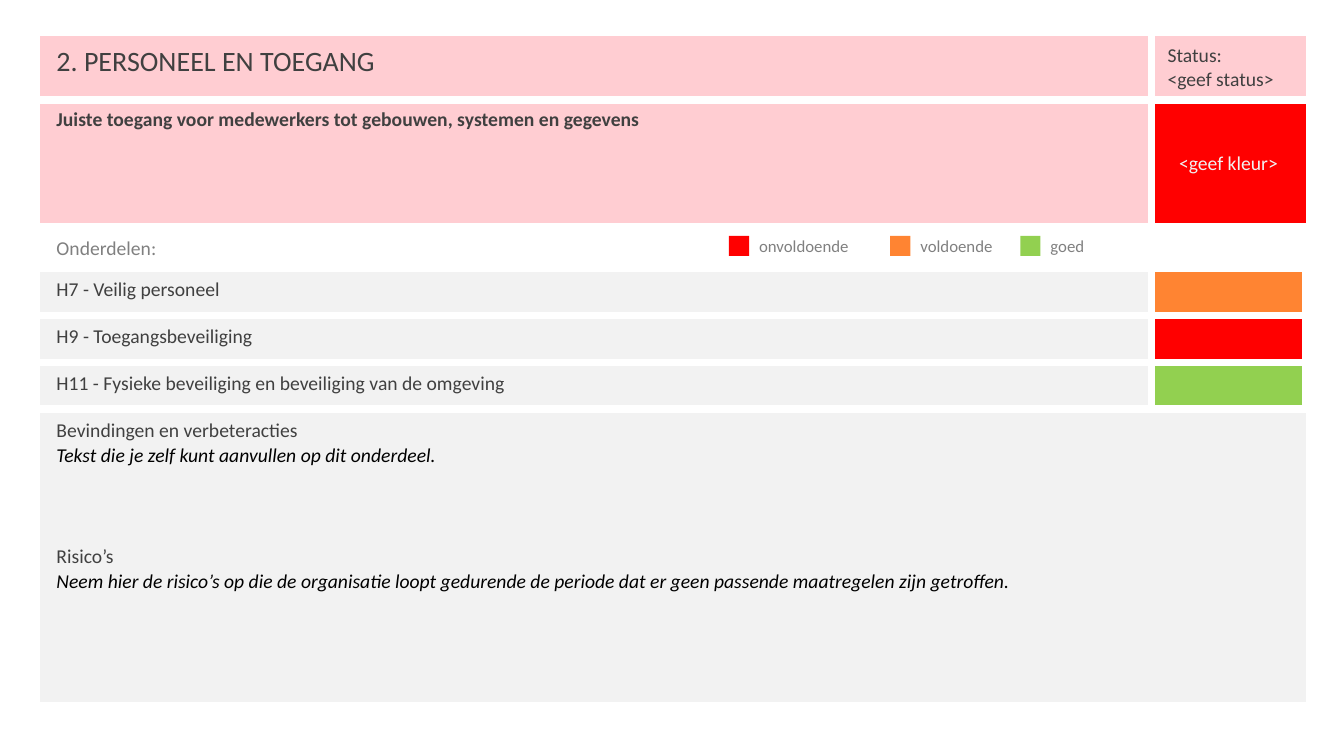
from dataclasses import dataclass

from lxml import etree
from pptx import Presentation
from pptx.dml.color import RGBColor
from pptx.enum.shapes import MSO_SHAPE
from pptx.enum.text import MSO_ANCHOR, MSO_AUTO_SIZE, PP_ALIGN
from pptx.oxml.ns import qn
from pptx.util import Inches, Pt

RECTANGLE = MSO_SHAPE.RECTANGLE
GROW = MSO_AUTO_SIZE.SHAPE_TO_FIT_TEXT
MIDDLE, TOP = MSO_ANCHOR.MIDDLE, MSO_ANCHOR.TOP
LEFT, CENTER = PP_ALIGN.LEFT, PP_ALIGN.CENTER
PLAIN_TABLE = "{2D5ABB26-0587-4C30-8999-92F81FD0307C}"


@dataclass(frozen=True)
class Theme:
    """Colours, font and type sizes of the slide."""
    font: str = "Calibri"
    title: int = 20
    body: int = 14
    legend: int = 12
    leading: int = 18
    border: int = 6
    dark: str = "404040"
    muted: str = "808080"
    black: str = "000000"
    white: str = "FFFFFF"
    panel: str = "F2F2F2"
    heading: str = "FFCDD2"
    poor: str = "FF0000"
    fair: str = "FF8432"
    good: str = "92D050"


class StatusSlide:
    """Draws the elements of a status report slide in one theme."""

    def __init__(self, slide, theme):
        self.shapes = slide.shapes
        self.theme = theme

    def style(self, paragraph, text, color, size, bold=False, italic=False,
              leading=None, before=0, align=LEFT):
        paragraph.text = text
        paragraph.alignment = align
        paragraph.space_before = Pt(before)
        if leading:
            paragraph.line_spacing = Pt(leading)
        font = paragraph.font
        font.name, font.size = self.theme.font, Pt(size)
        font.bold, font.italic = bold, italic
        font.color.rgb = RGBColor.from_string(color)

    def table(self, left, top, widths, heights):
        frame = self.shapes.add_table(
            len(heights), len(widths), Inches(left), Inches(top),
            Inches(sum(widths)), Inches(sum(heights)))
        grid = frame.table
        grid.first_row = grid.horz_banding = False
        grid._tbl.tblPr.find(qn("a:tableStyleId")).text = PLAIN_TABLE
        for column, width in zip(grid.columns, widths):
            column.width = Inches(width)
        for row, height in zip(grid.rows, heights):
            row.height = Inches(height)
        return grid

    def cell(self, cell, fill, lines=(), right=0.16, anchor=TOP):
        cell.fill.solid()
        cell.fill.fore_color.rgb = RGBColor.from_string(fill)
        cell.margin_left, cell.margin_right = Inches(0.16), Inches(right)
        cell.margin_top = cell.margin_bottom = Inches(0.08)
        cell.vertical_anchor = anchor
        frame = cell.text_frame
        for index, line in enumerate(lines):
            paragraph = frame.add_paragraph() if index else frame.paragraphs[0]
            self.style(paragraph, **line)

    def borders(self, cell, sides):
        properties = cell._tc.get_or_add_tcPr()
        for index, side in enumerate(sides):
            line = etree.Element(qn(f"a:ln{side}"), w=str(Pt(self.theme.border)))
            fill = etree.SubElement(line, qn("a:solidFill"))
            etree.SubElement(fill, qn("a:srgbClr"), val=self.theme.white)
            properties.insert(index, line)

    def legend_entry(self, left, width, label, color):
        swatch = self.shapes.add_shape(
            RECTANGLE, Inches(left), Inches(2.34), Inches(0.2), Inches(0.2))
        swatch.shadow.inherit = False
        swatch.fill.solid()
        swatch.fill.fore_color.rgb = RGBColor.from_string(color)
        swatch.line.fill.background()
        caption = self.shapes.add_textbox(
            Inches(left + 0.2), Inches(2.29), Inches(width), Inches(0.3)).text_frame
        caption.word_wrap = True
        caption.auto_size = GROW
        self.style(caption.paragraphs[0], label, self.theme.muted, self.theme.legend)


def main():
    """Build the slide and save it."""
    theme = Theme()
    deck = Presentation()
    deck.slide_width, deck.slide_height = Inches(13.33), Inches(7.5)
    page = StatusSlide(deck.slides.add_slide(deck.slide_layouts[6]), theme)

    def line(text, color=theme.dark, size=theme.body, **options):
        return dict(text=text, color=color, size=size, **options)

    def spaced(text, color=theme.dark, **options):
        return line(text, color, leading=theme.leading, **options)

    report = page.table(0.4, 0.36, [11.02, 1.53],
                        [0.63, 1.26, 0.41, 0.46, 0.46, 0.46, 2.9])
    last = len(report.rows) - 1
    merged = (2, last)
    for row in merged:
        report.cell(row, 0).merge(report.cell(row, 1))

    page.cell(report.cell(0, 0), theme.heading,
              [line("2. PERSONEEL EN TOEGANG", size=theme.title)], right=0.79)
    page.cell(report.cell(0, 1), theme.heading,
              [line("Status:"), line("<geef status>")])
    page.cell(report.cell(1, 0), theme.heading,
              [line("Juiste toegang voor medewerkers tot gebouwen, systemen en gegevens",
                    bold=True)], right=0.79)
    page.cell(report.cell(1, 1), theme.poor,
              [line("<geef kleur>", theme.panel, align=CENTER)], anchor=MIDDLE)
    page.cell(report.cell(2, 0), theme.white, [spaced("Onderdelen:", theme.muted)])

    chapters = [
        ("H7 - Veilig personeel", theme.fair),
        ("H9 - Toegangsbeveiliging", theme.poor),
        ("H11 - Fysieke beveiliging en beveiliging van de omgeving", theme.good),
    ]
    for row, (chapter, rating) in enumerate(chapters, start=3):
        page.cell(report.cell(row, 0), theme.panel, [spaced(chapter)])
        page.cell(report.cell(row, 1), rating)

    page.cell(report.cell(last, 0), theme.panel, [
        spaced("Bevindingen en verbeteracties"),
        spaced("Tekst die je zelf kunt aanvullen op dit onderdeel.",
               theme.black, italic=True),
        spaced("Risico’s", before=3 * theme.leading),
        spaced("Neem hier de risico’s op die de organisatie loopt gedurende de "
               "periode dat er geen passende maatregelen zijn getroffen.",
               theme.black, italic=True),
    ])

    for row in range(last + 1):
        horizontal = ("T" if row else "") + ("B" if row < last else "")
        for column, inner in enumerate("RL"):
            vertical = "" if row in merged else inner
            if column and 2 < row < last:
                vertical = "LR"
            page.borders(report.cell(row, column), vertical + horizontal)

    for entry in [(7.23, 1.13, "onvoldoende", theme.poor),
                  (8.83, 1.13, "voldoende", theme.fair),
                  (10.12, 0.94, "goed", theme.good)]:
        page.legend_entry(*entry)

    deck.save("out.pptx")


if __name__ == "__main__":
    main()
